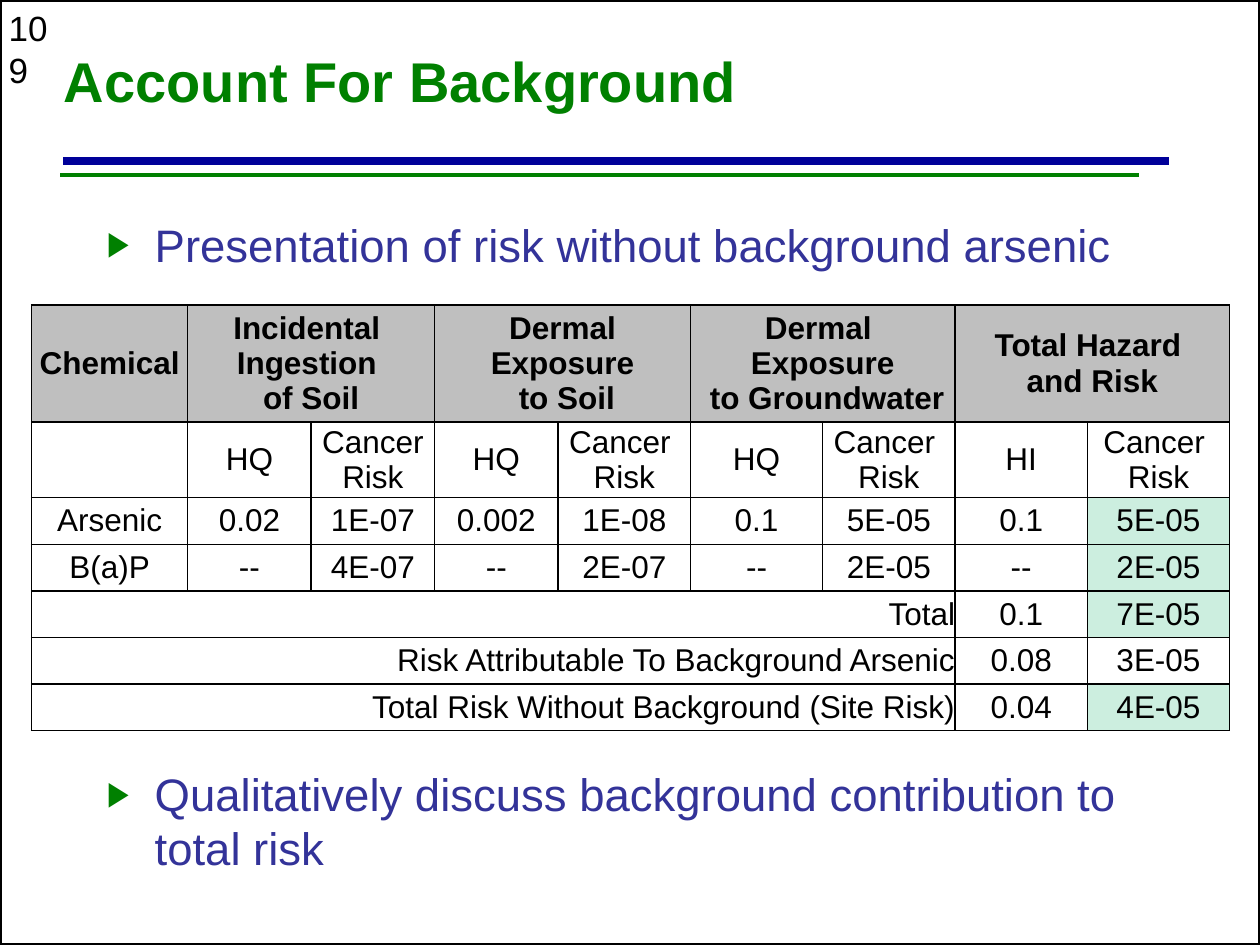
from lxml import etree
from pptx import Presentation
from pptx.dml.color import RGBColor
from pptx.enum import shapes, text
from pptx.oxml import ns
from pptx.util import Inches, Pt

TITLE = "Account For Background"
NUM = "109"
NOTES = [
    ("Presentation of risk without background arsenic", (0.75, 1.67, 8.5, 0.7)),
    ("Qualitatively discuss background contribution to total risk", (0.75, 6.03, 8.5, 1)),
]
RULES = [(0.5, 9.28, 1.28, "000099", 4.5), (0.48, 9.04, 1.39, "008000", 2)]
COLS = [1.24, 0.98, 0.98, 0.98, 1.05, 1.05, 1.05, 1.05, 1.13]
ROWS = [0.93, 0.6] + [0.37] * 5
HEAD = [
    "Chemical",
    "Incidental \nIngestion \nof Soil", "",
    "Dermal Exposure\n to Soil", "",
    "Dermal \nExposure\n to Groundwater", "",
    "Total Hazard \nand Risk", "",
]
RISK = "Cancer \nRisk"
BODY = [
    ["", "HQ", "Cancer Risk", "HQ", RISK, "HQ", RISK, "HI", RISK],
    ["Arsenic", "0.02", "1E-07", "0.002", "1E-08", "0.1", "5E-05", "0.1", "5E-05"],
    ["B(a)P", "--", "4E-07", "--", "2E-07", "--", "2E-05", "--", "2E-05"],
]
SUMS = [
    ("Total", "0.1", "7E-05"),
    ("Risk Attributable To Background Arsenic", "0.08", "3E-05"),
    ("Total Risk Without Background (Site Risk)", "0.04", "4E-05"),
]
GRID = [HEAD] + BODY + [[name] + [""] * 6 + [hq, risk] for name, hq, risk in SUMS]
SPANS = [(0, c, c + 1) for c in (1, 3, 5, 7)] + [(r, 0, 6) for r in (4, 5, 6)]
MINT = {(r, 8) for r in (2, 3, 4, 6)}
MID = text.PP_ALIGN.CENTER


def rgb(code):
    return RGBColor.from_string(code)


def sub(node, tag, **vals):
    return etree.SubElement(node, ns.qn("a:" + tag), vals)


def style(para, size, color, bold=False):
    form = {"name": "Arial", "size": Pt(size), "bold": bold}
    for key, val in form.items():
        setattr(para.font, key, val)
    para.font.color.rgb = rgb(color)


def add_text(slide, words, box, anchor=text.MSO_ANCHOR.TOP):
    frame = slide.shapes.add_textbox(*map(Inches, box)).text_frame
    frame.word_wrap = True
    frame.vertical_anchor = anchor
    frame.text = words
    return frame.paragraphs[0]


def add_note(slide, words, box):
    para = add_text(slide, words, box)
    props = para._p.get_or_add_pPr()
    props.set("marL", str(Inches(0.38)))
    props.set("indent", str(-Inches(0.38)))
    sub(sub(props, "buClr"), "srgbClr", val="008000")
    sub(props, "buSzPct", val="75000")
    sub(props, "buFont", typeface="Arial")
    sub(props, "buChar", char="▶")
    style(para, 26, "333399")


def add_rule(slide, left, right, top, color, width):
    ends = map(Inches, (left, top, right, top))
    rule = slide.shapes.add_connector(shapes.MSO_CONNECTOR.STRAIGHT, *ends)
    rule.line.color.rgb = rgb(color)
    rule.line.width = Pt(width)
    sub(rule._element.spPr, "effectLst")


def edge(cell):
    props = cell._tc.get_or_add_tcPr()
    for side in "LRTB":
        line = sub(props, "ln" + side, w=str(Pt(1)))
        sub(sub(line, "solidFill"), "srgbClr", val="000000")


def fill_cell(cell, words, row, col):
    form = {"margin_left": 0, "margin_right": 0, "margin_top": 0,
            "margin_bottom": 0, "vertical_anchor": text.MSO_ANCHOR.MIDDLE}
    for key, val in form.items():
        setattr(cell, key, val)
    edge(cell)
    color = "BFBFBF" if row == 0 else "CCEEDF" if (row, col) in MINT else None
    if color:
        cell.fill.solid()
        cell.fill.fore_color.rgb = rgb(color)
    else:
        cell.fill.background()
    cell.text = words
    for para in cell.text_frame.paragraphs:
        para.alignment = text.PP_ALIGN.RIGHT if row > 3 and col == 0 else MID
        style(para, 18, "000000", row == 0)


def add_grid(slide):
    box = map(Inches, (0.25, 2.42, sum(COLS), sum(ROWS)))
    table = slide.shapes.add_table(len(ROWS), len(COLS), *box).table
    table.first_row = table.horz_banding = False
    for col, width in zip(table.columns, COLS):
        col.width = Inches(width)
    for row, height in zip(table.rows, ROWS):
        row.height = Inches(height)
    for r, line in enumerate(GRID):
        for c, words in enumerate(line):
            fill_cell(table.cell(r, c), words, r, c)
    for r, first, last in SPANS:
        table.cell(r, first).merge(table.cell(r, last))


def main():
    deck = Presentation()
    deck.slide_width, deck.slide_height = Inches(10), Inches(7.5)
    slide = deck.slides.add_slide(deck.slide_layouts[6])
    for rule in RULES:
        add_rule(slide, *rule)
    style(add_text(slide, NUM, (-0.03, 0, 0.54, 0.43)), 20, "000000")
    frame = slide.shapes.add_shape(shapes.MSO_SHAPE.RECTANGLE, 0, 0,
                                   deck.slide_width, deck.slide_height)
    frame.shadow.inherit = False
    frame.fill.background()
    frame.line.color.rgb = rgb("000000")
    frame.line.width = Pt(2)
    title = add_text(slide, TITLE, (0.41, 0.1, 8.3, 1.15), text.MSO_ANCHOR.MIDDLE)
    title.line_spacing = 0.85
    style(title, 32, "008000", True)
    add_note(slide, *NOTES[0])
    add_grid(slide)
    add_note(slide, *NOTES[1])
    deck.save("out.pptx")


if __name__ == "__main__":
    main()
